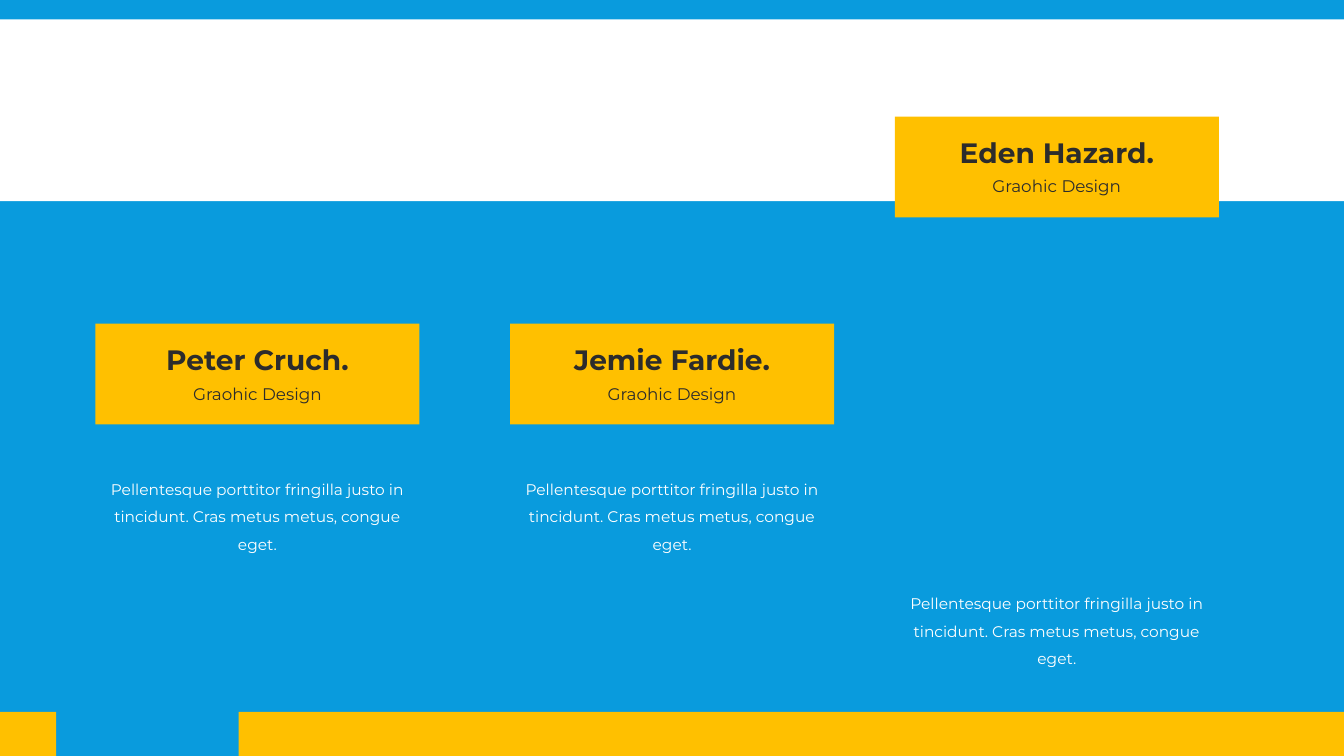
from pptx import Presentation
from pptx.dml.color import RGBColor
from pptx.enum.shapes import MSO_SHAPE
from pptx.enum.text import MSO_AUTO_SIZE, PP_ALIGN
from pptx.util import Pt

RECTANGLE = MSO_SHAPE.RECTANGLE
GROW = MSO_AUTO_SIZE.SHAPE_TO_FIT_TEXT
CENTER = PP_ALIGN.CENTER

BLUE = RGBColor(0x09, 0x9B, 0xDD)
YELLOW = RGBColor(0xFF, 0xC0, 0x00)
WHITE = RGBColor(0xFF, 0xFF, 0xFF)
DARK = RGBColor(0x2C, 0x2C, 0x2C)

SLIDE_WIDTH, SLIDE_HEIGHT = 960, 540
CARD_WIDTH, CARD_HEIGHT = 231.4, 72
BIO_HEIGHT = 67

NAME_FORMAT = {"name": "Montserrat", "size": Pt(20), "bold": True}
ROLE_FORMAT = {"name": "Montserrat", "size": Pt(12)}
BIO_FORMAT = {"name": "Montserrat", "size": Pt(11)}

ROLE = "Graohic Design"
BIO = ("Pellentesque porttitor fringilla justo in tincidunt. "
       "Cras metus metus, congue eget.")
MEMBERS = [
    ("Peter Cruch.", 68.2, 231.2, 332.6),
    ("Jemie Fardie.", 364.4, 231.2, 332.6),
    ("Eden Hazard.", 639.2, 83.3, 414.2),
]


def add_band(slide, box, color):
    band = slide.shapes.add_shape(RECTANGLE, *map(Pt, box))
    band.shadow.inherit = False
    band.fill.solid()
    band.fill.fore_color.rgb = color
    band.line.fill.background()


def add_label(slide, box, wording, font_format, color, line_spacing=1.0):
    label = slide.shapes.add_textbox(*map(Pt, box))
    frame = label.text_frame
    frame.word_wrap = True
    frame.auto_size = GROW
    paragraph = frame.paragraphs[0]
    paragraph.alignment = CENTER
    paragraph.line_spacing = line_spacing
    run = paragraph.add_run()
    run.text = wording
    for attribute, value in font_format.items():
        setattr(run.font, attribute, value)
    run.font.color.rgb = color


def add_backdrop(slide, box):
    left, top, width, height = box
    slide.background.fill.solid()
    slide.background.fill.fore_color.rgb = BLUE
    footer_height = 31.4
    footer_top = top + height - footer_height
    gap_left, gap_right = left + 40.2, left + 170.5
    add_band(slide, (left, top + 13.8, width, 129.8), WHITE)
    add_band(slide, (gap_right, footer_top, left + width - gap_right, footer_height), YELLOW)
    add_band(slide, (left, footer_top, gap_left - left, footer_height), YELLOW)


def add_name_card(slide, box, member):
    left, top, width, height = box
    inset = 26
    text_left, text_width = left + inset, width - 2 * inset
    add_band(slide, box, YELLOW)
    add_label(slide, (text_left, top + 9.8, text_width, 31.5), member, NAME_FORMAT, DARK)
    add_label(slide, (text_left, top + 39, text_width, 21.8), ROLE, ROLE_FORMAT, DARK)


def build_team_slide(presentation):
    slide = presentation.slides.add_slide(presentation.slide_layouts[6])
    add_backdrop(slide, (0, 0, SLIDE_WIDTH, SLIDE_HEIGHT))
    for member, left, card_top, bio_top in MEMBERS:
        add_name_card(slide, (left, card_top, CARD_WIDTH, CARD_HEIGHT), member)
        add_label(slide, (left, bio_top, CARD_WIDTH, BIO_HEIGHT), BIO, BIO_FORMAT, WHITE, 1.5)


def main():
    presentation = Presentation()
    presentation.slide_width = Pt(SLIDE_WIDTH)
    presentation.slide_height = Pt(SLIDE_HEIGHT)
    build_team_slide(presentation)
    presentation.save("out.pptx")


if __name__ == "__main__":
    main()
